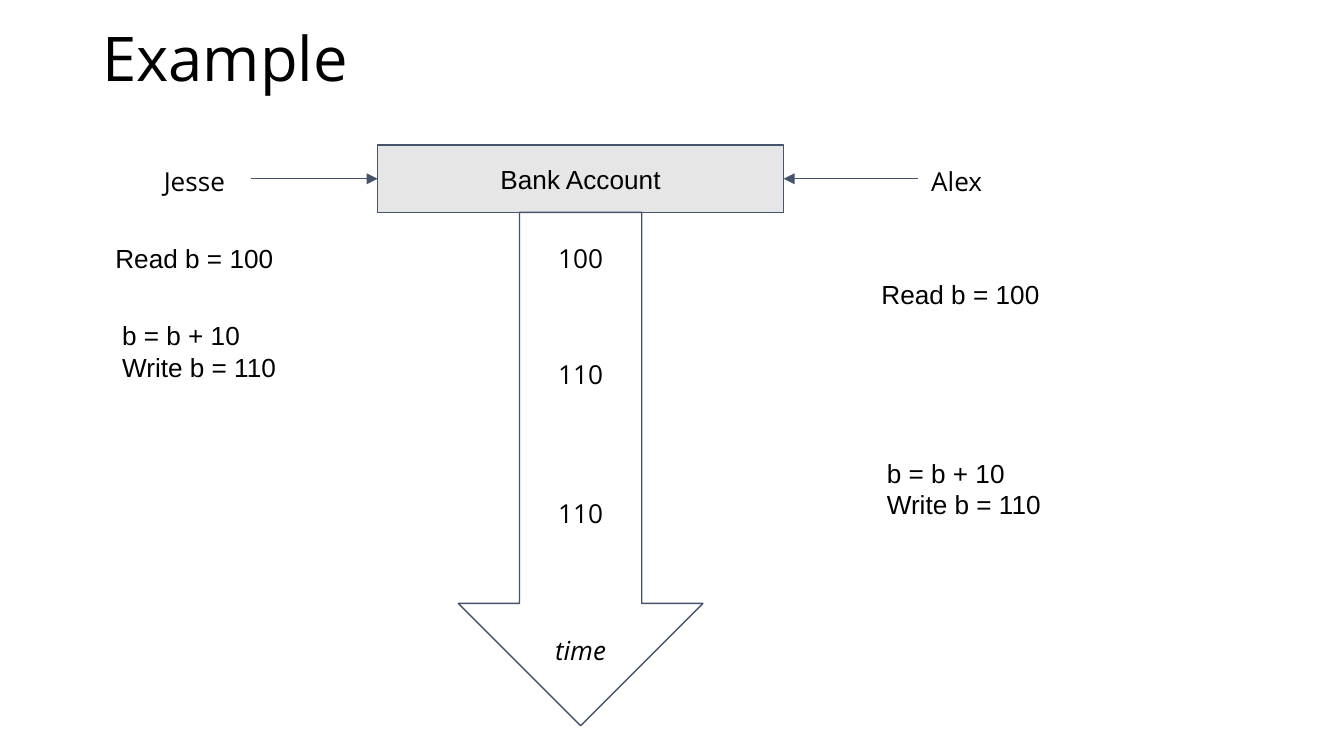
from lxml import etree
from pptx import Presentation
from pptx.dml.color import RGBColor
from pptx.enum.shapes import MSO_CONNECTOR, MSO_SHAPE
from pptx.enum.text import MSO_ANCHOR, MSO_AUTO_SIZE, PP_ALIGN
from pptx.oxml.ns import qn
from pptx.util import Inches, Pt

STRAIGHT = MSO_CONNECTOR.STRAIGHT
RECTANGLE, RIGHT_ARROW = MSO_SHAPE.RECTANGLE, MSO_SHAPE.RIGHT_ARROW
TOP, MIDDLE = MSO_ANCHOR.TOP, MSO_ANCHOR.MIDDLE
LEFT, CENTER = PP_ALIGN.LEFT, PP_ALIGN.CENTER
NO_AUTOFIT = MSO_AUTO_SIZE.NONE

COLORS = {"text": "000000", "line": "44546A", "box": "E7E6E6", "arrow": "FFFFFF"}
WIDTH = 10
HEIGHT = WIDTH * 9 / 16
AXIS = 4.32
LABEL_WIDTH, LABEL_HEIGHT = 0.75, 0.41
BOX_WIDTH, BOX_HEIGHT, BOX_TOP = 3.02, 0.5, 1.08
BOX_LEFT, BOX_RIGHT = AXIS - BOX_WIDTH / 2, AXIS + BOX_WIDTH / 2
BOX_MIDDLE, BOX_BOTTOM = BOX_TOP + BOX_HEIGHT / 2, BOX_TOP + BOX_HEIGHT
ARROW_LENGTH, ARROW_WIDTH = 3.82, 1.82
JESSE_LEFT, ALEX_LEFT, NAME_TOP = 1.12, 6.83, 1.13


def write(shape, text, font="Open Sans", size=14, align=LEFT, anchor=TOP,
          inset=(0.1, 0.1), italic=None):
    frame = shape.text_frame
    frame.text = text
    frame_format = {
        "word_wrap": True, "auto_size": NO_AUTOFIT, "vertical_anchor": anchor,
        "margin_left": Inches(inset[0]), "margin_right": Inches(inset[0]),
        "margin_top": Inches(inset[1]), "margin_bottom": Inches(inset[1]),
    }
    for name, value in frame_format.items():
        setattr(frame, name, value)
    for paragraph in frame.paragraphs:
        paragraph.alignment = align
        for run in paragraph.runs:
            for name, value in {"name": font, "size": Pt(size), "italic": italic}.items():
                setattr(run.font, name, value)
            run.font.color.rgb = RGBColor.from_string(COLORS["text"])


def outline(shape):
    shape.line.color.rgb = RGBColor.from_string(COLORS["line"])
    shape.line.width = Pt(0.75)


presentation = Presentation()
presentation.slide_width, presentation.slide_height = Inches(WIDTH), Inches(HEIGHT)
slide = presentation.slides.add_slide(presentation.slide_layouts[5])
shapes = slide.shapes

title = shapes.title
title_place = {"left": 0.69, "top": 0.13, "width": 8.62, "height": 0.65}
for name, value in title_place.items():
    setattr(title, name, Inches(value))
write(title, "Example", size=33, anchor=MIDDLE, inset=(0.07, 0.04))
title.text_frame.paragraphs[0].line_spacing = 0.9

blocks = [
    (RECTANGLE, BOX_LEFT, BOX_TOP, BOX_WIDTH, BOX_HEIGHT, 0, "box"),
    (RIGHT_ARROW, AXIS - ARROW_LENGTH / 2, BOX_BOTTOM + (ARROW_LENGTH - ARROW_WIDTH) / 2,
     ARROW_LENGTH, ARROW_WIDTH, 90, "arrow"),
]
for kind, left, top, width, height, rotation, color in blocks:
    block = shapes.add_shape(kind, Inches(left), Inches(top), Inches(width), Inches(height))
    block.rotation = rotation
    block.shadow.inherit = False
    block.fill.solid()
    block.fill.fore_color.rgb = RGBColor.from_string(COLORS[color])
    outline(block)
    if kind == RECTANGLE:
        write(block, "Bank Account", font="Arial", align=CENTER, anchor=MIDDLE)

for start, end in [(JESSE_LEFT + LABEL_WIDTH, BOX_LEFT), (ALEX_LEFT, BOX_RIGHT)]:
    connector = shapes.add_connector(
        STRAIGHT, Inches(start), Inches(BOX_MIDDLE), Inches(end), Inches(BOX_MIDDLE))
    outline(connector)
    properties = connector._element.spPr
    etree.SubElement(properties.find(qn("a:ln")), qn("a:tailEnd"), type="triangle")
    etree.SubElement(properties, qn("a:effectLst"))

axis_left = AXIS - LABEL_WIDTH / 2
labels = [
    ("Jesse", JESSE_LEFT, NAME_TOP, LEFT, None),
    ("Alex", ALEX_LEFT, NAME_TOP, LEFT, None),
    ("100", axis_left, 1.7, CENTER, None),
    ("110", axis_left, 2.57, CENTER, None),
    ("110", axis_left, 3.6, CENTER, None),
    ("time", axis_left, 4.62, CENTER, True),
]
for text, left, top, align, italic in labels:
    label = shapes.add_textbox(
        Inches(left), Inches(top), Inches(LABEL_WIDTH), Inches(LABEL_HEIGHT))
    write(label, text, align=align, italic=italic)

READ = "Read b = 100"
UPDATE = "b = b + 10\nWrite b = 110"
steps = [
    (READ, 0.76, 1.7, 1.48, 0.41),
    (READ, 6.46, 1.97, 1.48, 0.6),
    (UPDATE, 0.81, 2.28, 1.82, 0.71),
    (UPDATE, 6.5, 3.3, 1.4, 0.71),
]
for text, *place in steps:
    step = shapes.add_textbox(*map(Inches, place))
    write(step, text, font="Arial")

presentation.save("out.pptx")
